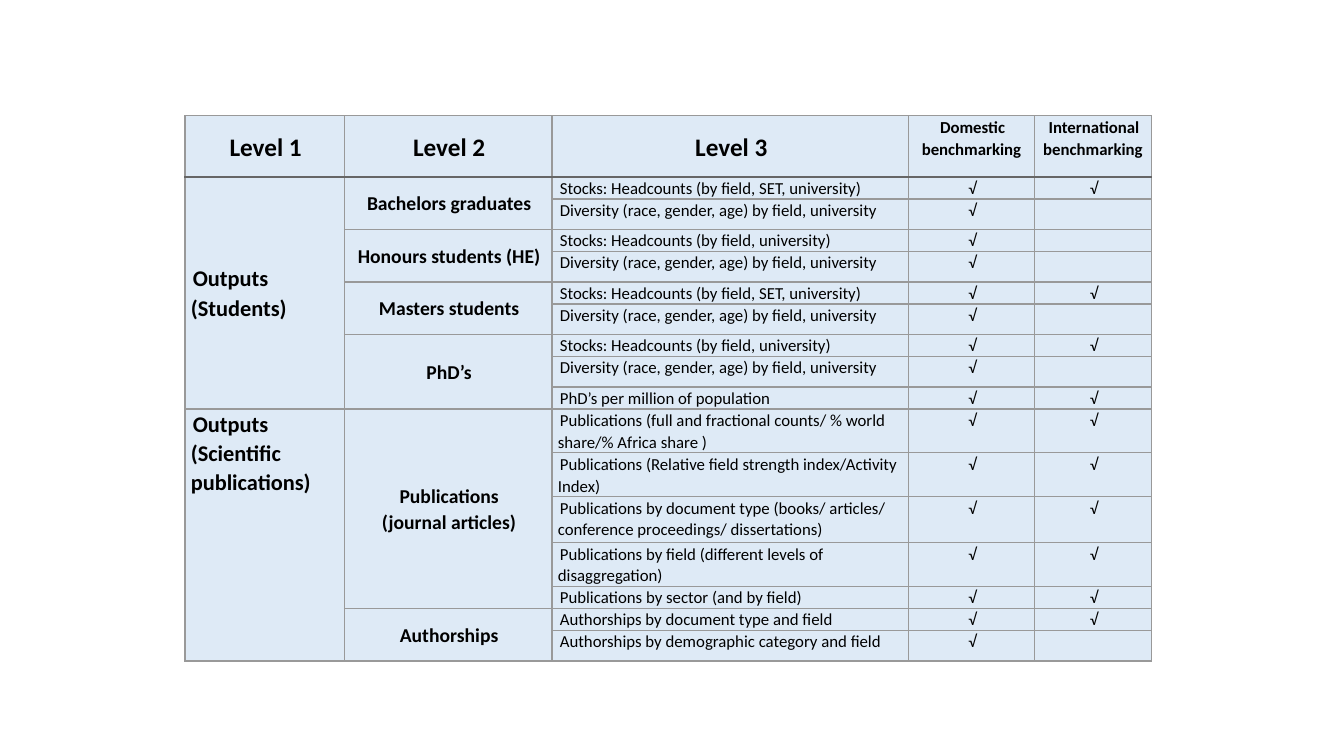
from lxml import etree
from pptx import Presentation
from pptx.dml.color import RGBColor
from pptx.enum.text import MSO_ANCHOR, PP_ALIGN
from pptx.oxml.ns import qn
from pptx.util import Cm, Pt

LEFT, CENTER = PP_ALIGN.LEFT, PP_ALIGN.CENTER
TOP, MIDDLE = MSO_ANCHOR.TOP, MSO_ANCHOR.MIDDLE
BLUE = RGBColor(0xDE, 0xEA, 0xF6)
BLACK = RGBColor(0, 0, 0)
GREY = RGBColor(0x99, 0x99, 0x99)
DARK = RGBColor(0x66, 0x66, 0x66)

WIDTHS = [4.02, 5.23, 8.99, 3.17, 2.95]
HEAD, LOW, TALL, DOUBLE = 1.54, 0.55, 0.77, 1.1
HEADERS = ["Level 1", "Level 2", "Level 3",
           "Domestic benchmarking", "International benchmarking"]
TICK = "√"
SET = "Stocks: Headcounts (by field, SET, university)"
STOCKS = "Stocks: Headcounts (by field, university)"
MIX = "Diversity (race, gender, age) by field, university"

# Each measure holds its label, row height and number of ticks.
GROUPS = [
    ("Outputs (Students)", MIDDLE, [
        ("Bachelors graduates", [(SET, LOW, 2), (MIX, TALL, 1)]),
        ("Honours students (HE)", [(STOCKS, LOW, 1), (MIX, TALL, 1)]),
        ("Masters students", [(SET, LOW, 2), (MIX, TALL, 1)]),
        ("PhD’s", [(STOCKS, LOW, 2), (MIX, TALL, 1),
                   ("PhD’s per million of population", LOW, 2)]),
    ]),
    ("Outputs (Scientific publications)", TOP, [
        ("Publications\n(journal articles)", [
            ("Publications (full and fractional counts/ % world share/% Africa share )", DOUBLE, 2),
            ("Publications (Relative field strength index/Activity Index)", DOUBLE, 2),
            ("Publications by document type (books/ articles/ conference proceedings/ dissertations)", 1.16, 2),
            ("Publications by field (different levels of disaggregation)", DOUBLE, 2),
            ("Publications by sector (and by field)", LOW, 2),
        ]),
        ("Authorships", [
            ("Authorships by document type and field", LOW, 2),
            ("Authorships by demographic category and field", TALL, 1),
        ]),
    ]),
]


def border(cell, side, color, width):
    line = etree.SubElement(cell._tc.get_or_add_tcPr(), qn("a:ln" + side),
                            w=str(Pt(width)))
    fill = etree.SubElement(line, qn("a:solidFill"))
    etree.SubElement(fill, qn("a:srgbClr"), val=str(color))


def frame(cell, row):
    edges = {"T": row == 1, "B": row == 0}
    for side in "LRTB":
        strong = edges.get(side, False)
        border(cell, side, DARK if strong else GREY, 1.5 if strong else 1)
    cell.fill.solid()
    cell.fill.fore_color.rgb = BLUE
    cell.margin_left = cell.margin_right = Cm(0.15)
    cell.margin_top = cell.margin_bottom = 0


def write(cell, text, size=12, bold=False, align=CENTER, anchor=TOP):
    cell.text = text
    cell.vertical_anchor = anchor
    for par in cell.text_frame.paragraphs:
        par.alignment = align
        par.line_spacing = 1.07
        par._p.get_or_add_pPr().set("indent", str(Cm(0.05)))
        font = par.font
        font.name = "Calibri"
        font.size = Pt(size)
        font.bold = bold
        font.color.rgb = BLACK
        if not text:
            par._p.get_or_add_endParaRPr().set("sz", str(size * 100))


def matrix(slide, left, top):
    items = [item for _, _, topics in GROUPS
             for _, part in topics for item in part]
    heights = [HEAD] + [item[1] for item in items]
    table = slide.shapes.add_table(
        len(heights), len(WIDTHS), left, top,
        Cm(sum(WIDTHS)), Cm(sum(heights))).table
    table.first_row = table.horz_banding = False
    for col, width in zip(table.columns, WIDTHS):
        col.width = Cm(width)
    for row, height in enumerate(heights):
        table.rows[row].height = Cm(height)
        for cell in table.rows[row].cells:
            frame(cell, row)
            write(cell, "")

    for col, text in enumerate(HEADERS):
        level = col < 3
        write(table.cell(0, col), text, 18 if level else 12, True,
              anchor=MIDDLE if level else TOP)

    row = 1
    for output, anchor, topics in GROUPS:
        start = row
        for topic, part in topics:
            first = row
            for label, _, ticks in part:
                write(table.cell(row, 2), label, align=LEFT)
                for col in range(3, 3 + ticks):
                    write(table.cell(row, col), TICK)
                row += 1
            cell = table.cell(first, 1)
            cell.merge(table.cell(row - 1, 1))
            write(cell, topic, 14, True, anchor=MIDDLE)
        cell = table.cell(start, 0)
        cell.merge(table.cell(row - 1, 0))
        write(cell, output, 16, True, LEFT, anchor)


def main():
    deck = Presentation()
    deck.slide_width, deck.slide_height = Cm(33.87), Cm(19.05)
    slide = deck.slides.add_slide(deck.slide_layouts[6])
    matrix(slide, Cm(4.66), Cm(2.92))
    deck.save("out.pptx")


if __name__ == "__main__":
    main()
